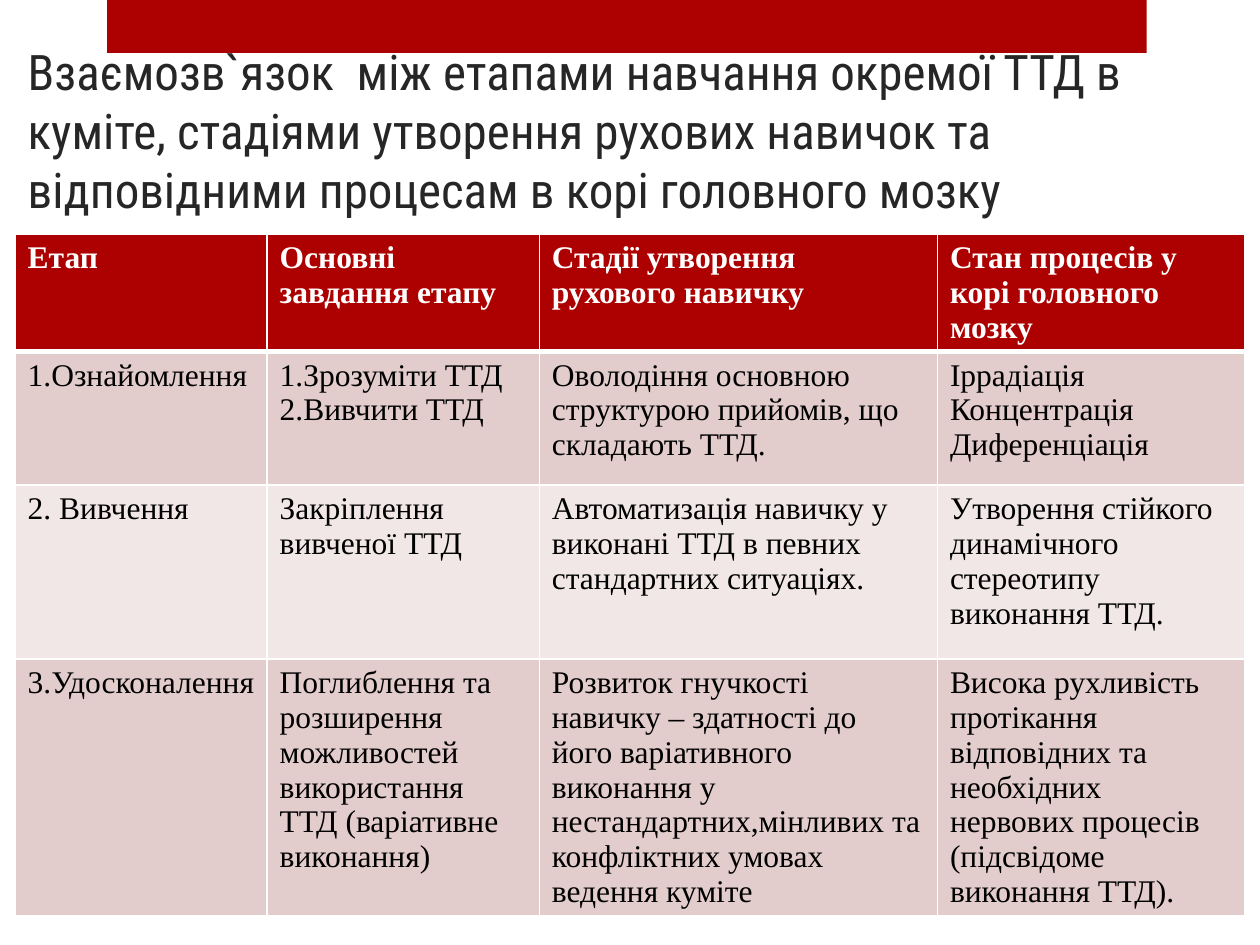
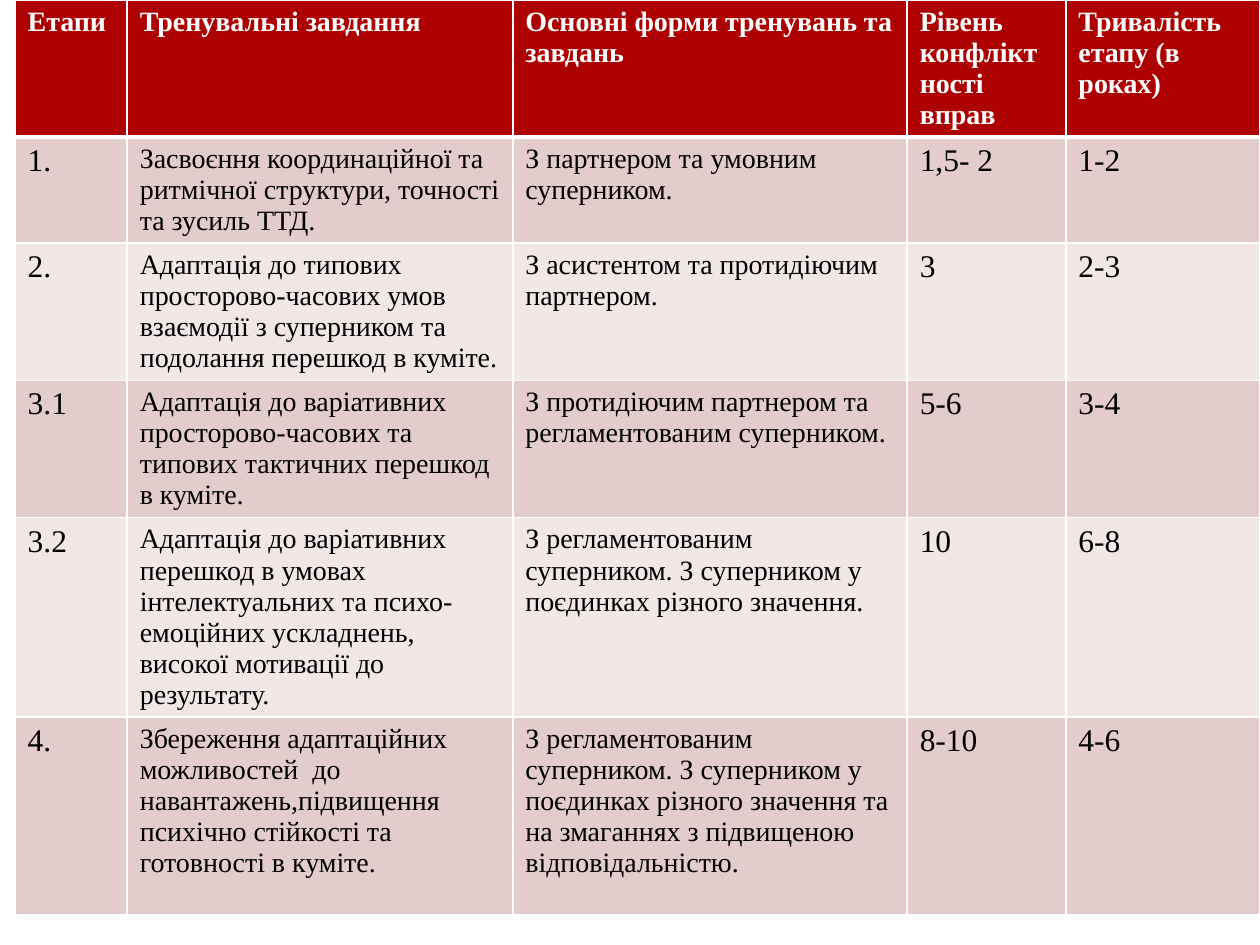
from lxml import etree
from pptx import Presentation
from pptx import util as u
from pptx.dml.color import RGBColor
from pptx.enum import shapes, text
from pptx.oxml import ns

RED = RGBColor(0xAD, 0x01, 0x01)
ROSE = RGBColor(0xE3, 0xCC, 0xCC)
PALE_ROSE = RGBColor(0xF1, 0xE7, 0xE7)
WHITE = RGBColor(0xFF, 0xFF, 0xFF)
BLACK = RGBColor(0, 0, 0)
DARK_GREY = RGBColor(0x26, 0x26, 0x26)
TITLE_FONT = "Roboto Condensed"
TABLE_FONT = "Times New Roman"

WIDTH, HEIGHT = 10, 7.5
MARGIN = 0.12
BAND_LEFT, BAND_WIDTH = 0.85, 8.25
BANDS = [(0, 0.42), (0.9 * HEIGHT, 0.03)]  # top, height

TITLE = ("Взаємозв`язок  між етапами навчання окремої ТТД в куміте, "
         "стадіями утворення рухових навичок та відповідними процесам "
         "в корі головного мозку")

LEARNING_STAGES = {
    "top": 1.86,
    "columns": [2, 2.16, 3.16, 2.44],
    "rows": [0.92, 1.06, 1.38, 2.03],
    "header_size": 18,
    "body_sizes": [18, 18, 18, 18],
    "cells": [
        ("Етап", "Основні завдання етапу", "Стадії утворення рухового навичку",
         "Стан процесів у корі головного мозку"),
        ("1.Ознайомлення", "1.Зрозуміти ТТД\n2.Вивчити ТТД",
         "Оволодіння основною структурою прийомів, що складають ТТД.",
         "Іррадіація\nКонцентрація\nДиференціація"),
        ("2. Вивчення", "Закріплення вивченої ТТД",
         "Автоматизація навичку у виконані ТТД в певних стандартних ситуаціях.",
         "Утворення стійкого динамічного стереотипу виконання ТТД."),
        ("3.Удосконалення",
         "Поглиблення та розширення можливостей використання ТТД "
         "(варіативне виконання)",
         "Розвиток гнучкості навичку – здатності до його варіативного виконання "
         "у нестандартних,мінливих та конфліктних умовах ведення куміте",
         "Висока рухливість протікання відповідних та необхідних нервових "
         "процесів (підсвідоме виконання ТТД)."),
    ],
}

TRAINING_STAGES = {
    "top": 0,
    "columns": [0.89, 3.06, 3.13, 1.26, 1.54],
    "rows": [1.08, 0.84, 1.09, 1.09, 1.58, 1.57],
    "header_size": 16,
    "body_sizes": [18, 16, 16, 18, 18],
    "cells": [
        ("Етапи", "Тренувальні завдання", "Основні форми тренувань та завдань",
         "Рівень конфліктності вправ", "Тривалість етапу (в роках)"),
        ("1.",
         "Засвоєння координаційної та ритмічної структури, точності "
         "та зусиль ТТД.",
         "З партнером та умовним суперником.", "1,5- 2", "1-2"),
        ("2.",
         "Адаптація до типових просторово-часових умов взаємодії з суперником "
         "та подолання перешкод в куміте.",
         "З асистентом та протидіючим партнером.", "3", "2-3"),
        ("3.1",
         "Адаптація до варіативних просторово-часових та типових тактичних "
         "перешкод в куміте.",
         "З протидіючим партнером та регламентованим суперником.", "5-6", "3-4"),
        ("3.2",
         "Адаптація до варіативних перешкод в умовах інтелектуальних та "
         "психо-емоційних ускладнень, високої мотивації до результату.",
         "З регламентованим суперником. З суперником у поєдинках різного "
         "значення.", "10", "6-8"),
        ("4.",
         "Збереження адаптаційних можливостей  до навантажень,підвищення "
         "психічно стійкості та готовності в куміте.",
         "З регламентованим суперником. З суперником у поєдинках різного "
         "значення та на змаганнях з підвищеною відповідальністю.",
         "8-10", "4-6"),
    ],
}


def format_text(text_frame, font_name, size, color, bold=False):
    for paragraph in text_frame.paragraphs:
        paragraph.alignment = text.PP_ALIGN.LEFT
        for run in paragraph.runs:
            run.font.name = font_name
            run.font.size = u.Pt(size)
            run.font.bold = bold
            run.font.color.rgb = color


def add_master_bands(presentation, slide):
    """Draw the bands on a slide, then move them behind everything on the master."""
    master_tree = presentation.slide_master.shapes.element
    for top, height in BANDS:
        band = slide.shapes.add_shape(
            shapes.MSO_SHAPE.RECTANGLE, u.Inches(BAND_LEFT), u.Inches(top),
            u.Inches(BAND_WIDTH), u.Inches(height))
        band.shadow.inherit = False
        band.fill.solid()
        band.fill.fore_color.rgb = RED
        band.line.fill.background()
        master_tree.insert(2, band.element)


def add_title(slide):
    title = slide.shapes.title
    title.left, title.top = u.Inches(MARGIN), u.Inches(0.76)
    title.width, title.height = u.Inches(WIDTH - MARGIN), u.Inches(1.02)
    frame = title.text_frame
    frame.text = TITLE
    frame.word_wrap = True
    frame.auto_size = text.MSO_AUTO_SIZE.NONE
    frame.vertical_anchor = text.MSO_ANCHOR.BOTTOM
    format_text(frame, TITLE_FONT, 28, DARK_GREY)


def set_borders(cell, top=1, bottom=1):
    properties = cell._tc.get_or_add_tcPr()
    for side, points in (("L", 1), ("R", 1), ("T", top), ("B", bottom)):
        line = etree.SubElement(properties, ns.qn(f"a:ln{side}"), w=str(u.Pt(points)))
        fill = etree.SubElement(line, ns.qn("a:solidFill"))
        etree.SubElement(fill, ns.qn("a:srgbClr"), val=str(WHITE))


def add_stage_table(slide, stages):
    columns, rows = stages["columns"], stages["rows"]
    table = slide.shapes.add_table(
        len(rows), len(columns), u.Inches(MARGIN), u.Inches(stages["top"]),
        u.Inches(sum(columns)), u.Inches(sum(rows))).table
    for column, width in zip(table.columns, columns):
        column.width = u.Inches(width)
    for row, height in zip(table.rows, rows):
        row.height = u.Inches(height)

    for row_index, row_texts in enumerate(stages["cells"]):
        header = row_index == 0
        fill = RED if header else ROSE if row_index % 2 else PALE_ROSE
        for column_index, cell_text in enumerate(row_texts):
            cell = table.cell(row_index, column_index)
            set_borders(cell, top=3 if row_index == 1 else 1, bottom=3 if header else 1)
            cell.fill.solid()
            cell.fill.fore_color.rgb = fill
            cell.text_frame.text = cell_text
            size = stages["header_size"] if header else stages["body_sizes"][column_index]
            format_text(cell.text_frame, TABLE_FONT, size,
                        WHITE if header else BLACK, bold=header)


def main():
    presentation = Presentation()
    presentation.slide_width = u.Inches(WIDTH)
    presentation.slide_height = u.Inches(HEIGHT)
    title_only, blank = presentation.slide_layouts[5], presentation.slide_layouts[6]

    learning_slide = presentation.slides.add_slide(title_only)
    add_master_bands(presentation, learning_slide)
    add_title(learning_slide)
    add_stage_table(learning_slide, LEARNING_STAGES)

    training_slide = presentation.slides.add_slide(blank)
    add_stage_table(training_slide, TRAINING_STAGES)
    presentation.save("out.pptx")


if __name__ == "__main__":
    main()
